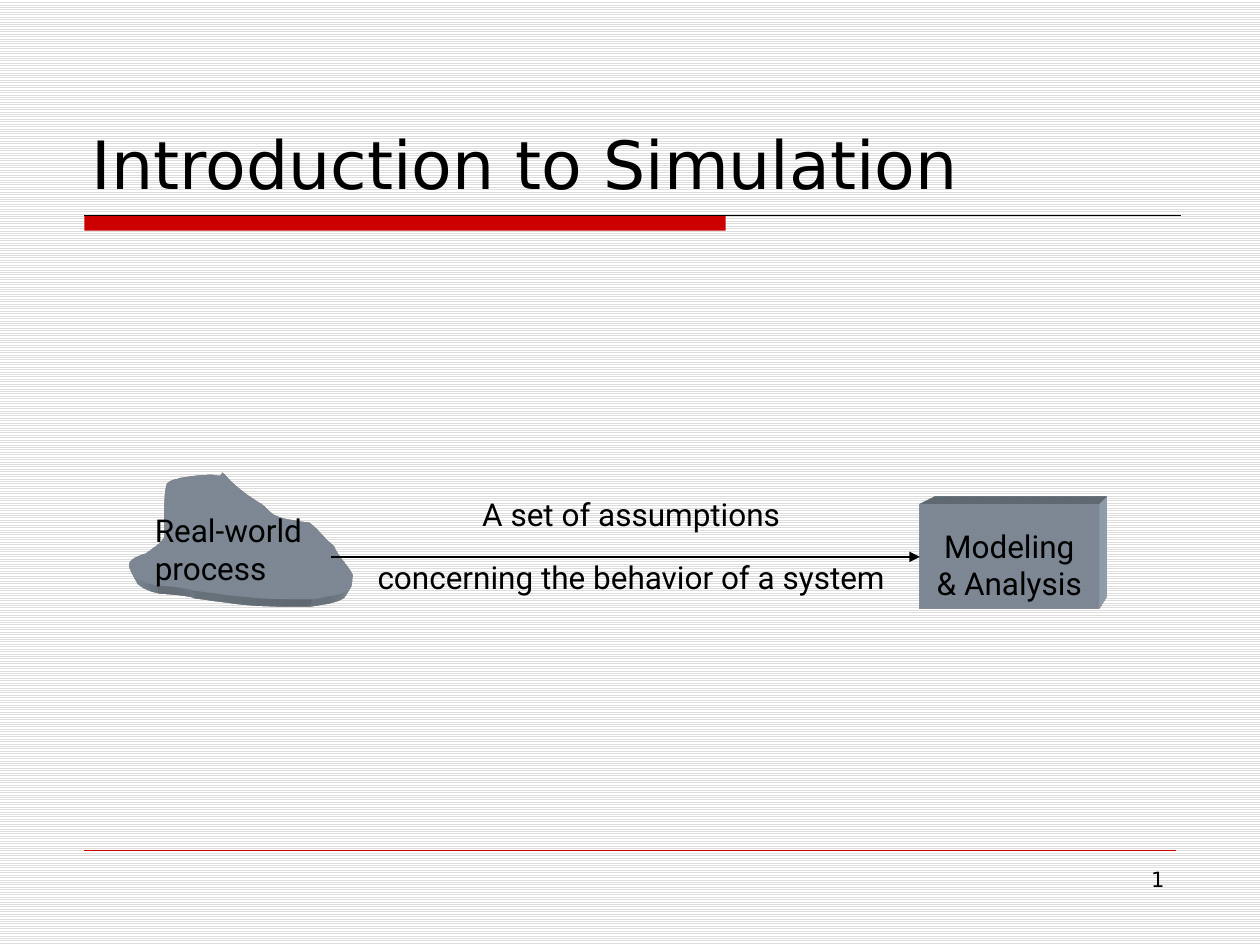
from dataclasses import dataclass

from lxml import etree
from pptx import Presentation
from pptx.dml.color import RGBColor
from pptx.enum.dml import MSO_PATTERN
from pptx.enum.shapes import MSO_CONNECTOR, MSO_SHAPE
from pptx.enum.text import MSO_ANCHOR, PP_ALIGN
from pptx.oxml.ns import qn
from pptx.util import Inches, Pt

LEFT, CENTER, RIGHT = PP_ALIGN.LEFT, PP_ALIGN.CENTER, PP_ALIGN.RIGHT
TOP, BOTTOM = MSO_ANCHOR.TOP, MSO_ANCHOR.BOTTOM
RECT = MSO_SHAPE.RECTANGLE
STRAIGHT = MSO_CONNECTOR.STRAIGHT
STRIPES = MSO_PATTERN.LIGHT_HORIZONTAL


@dataclass(frozen=True)
class Theme:
    ink: str = "000000"
    paper: str = "FFFFFF"
    stripe: str = "DDDDDD"
    red: str = "CC0000"
    steel: str = "A3B2C1"
    head: str = "DejaVu Sans"
    body: str = "Roboto"
    title: int = 38
    label: int = 18
    number: int = 12


THEME = Theme()

CLOUD_START = (1.77, 3.75)
CLOUD_CURVES = [
    ((1.85, 3.84), (1.93, 3.91), (2.06, 3.99)),
    ((2.12, 4.02), (2.13, 4.07), (2.21, 4.1)),
    ((2.29, 4.13), (2.37, 4.13), (2.46, 4.15)),
    ((2.54, 4.21), (2.57, 4.27), (2.65, 4.33)),
    ((2.68, 4.41), (2.76, 4.48), (2.8, 4.56)),
    ((2.79, 4.59), (2.8, 4.63), (2.78, 4.66)),
    ((2.74, 4.72), (2.57, 4.73), (2.48, 4.75)),
    ((2.33, 4.75), (2.18, 4.75), (2.04, 4.74)),
    ((1.88, 4.73), (1.7, 4.7), (1.54, 4.68)),
    ((1.44, 4.65), (1.34, 4.65), (1.24, 4.64)),
    ((1.15, 4.62), (1.11, 4.6), (1.06, 4.56)),
    ((1.02, 4.48), (1, 4.44), (1.16, 4.39)),
    ((1.22, 4.35), (1.28, 4.31), (1.31, 4.26)),
    ((1.31, 4.24), (1.3, 3.9), (1.33, 3.84)),
    ((1.36, 3.79), (1.61, 3.77), (1.68, 3.77)),
    ((1.77, 3.78), (1.74, 3.79), (1.77, 3.75)),
]


def rgb(color):
    return RGBColor.from_string(color)


def add_node(parent, tag, **values):
    node = etree.SubElement(parent, qn(tag))
    for name, value in values.items():
        node.set(name, value)
    return node


def paint(shape, color):
    shape.shadow.inherit = False
    shape.fill.solid()
    shape.fill.fore_color.rgb = rgb(color)
    shape.line.fill.background()


def extrude(shape, view):
    props = shape._element.spPr
    scene = add_node(props, "a:scene3d")
    add_node(scene, "a:camera", prst=f"legacyPerspective{view}")
    add_node(scene, "a:lightRig", rig="legacyFlat3", dir="b")
    solid = add_node(props, "a:sp3d", extrusionH="430200",
                     prstMaterial="legacyMatte")
    for edge in ("a:bevelT", "a:bevelB"):
        add_node(solid, edge, w="13500", h="13500", prst="angle")
    tint = add_node(solid, "a:extrusionClr")
    add_node(tint, "a:srgbClr", val=THEME.steel)


def add_block(slide, box, color):
    block = slide.shapes.add_shape(RECT, *map(Inches, box))
    paint(block, color)
    return block


def add_blob(slide, start, curves, color):
    pen = slide.shapes.build_freeform(*map(Inches, start))
    points = [tuple(map(Inches, point)) for curve in curves for point in curve]
    pen.add_line_segments(points, close=True)
    blob = pen.convert_to_shape()
    lines = list(blob._element.iter(qn("a:lnTo")))
    for one, two, end in zip(lines[::3], lines[1::3], lines[2::3]):
        one.tag = qn("a:cubicBezTo")
        for line in (two, end):
            one.append(line[0])
            line.getparent().remove(line)
    paint(blob, color)
    return blob


def add_line(slide, start, end, color, width, arrow=False):
    ends = map(Inches, (*start, *end))
    line = slide.shapes.add_connector(STRAIGHT, *ends)
    line.line.color.rgb = rgb(color)
    line.line.width = Pt(width)
    if arrow:
        add_node(line.line._get_or_add_ln(), "a:tailEnd", type="triangle")
    add_node(line._element.spPr, "a:effectLst")


def add_text(slide, box, text, size, font, align=CENTER, anchor=TOP):
    frame = slide.shapes.add_textbox(*map(Inches, box)).text_frame
    frame.word_wrap = True
    frame.vertical_anchor = anchor
    frame.text = text
    para = frame.paragraphs[0]
    para.alignment = align
    style = para.runs[0].font
    style.name = font
    style.size = Pt(size)
    style.color.rgb = rgb(THEME.ink)


def add_label(slide, box, text, align=CENTER):
    add_text(slide, box, text, THEME.label, THEME.body, align)


def add_frame(slide):
    fill = slide.background.fill
    fill.patterned()
    fill.pattern = STRIPES
    fill.fore_color.rgb = rgb(THEME.stripe)
    fill.back_color.rgb = rgb(THEME.paper)
    add_block(slide, (0.67, 1.71, 5.09, 0.12), THEME.red)
    add_line(slide, (0.67, 1.71), (9.37, 1.71), THEME.ink, 0.5)
    add_line(slide, (0.67, 6.75), (9.33, 6.75), THEME.red, 0.25)
    add_text(slide, (7.17, 6.83, 2.17, 0.52), "1",
             THEME.number, THEME.head, RIGHT)
    add_text(slide, (0.63, 0.33, 8.75, 1.33), "Introduction to Simulation",
             THEME.title, THEME.head, LEFT, BOTTOM)


def add_model(slide):
    blob = add_blob(slide, CLOUD_START, CLOUD_CURVES, THEME.steel)
    extrude(blob, "Bottom")
    block = add_block(slide, (7.3, 4, 1.42, 0.83), THEME.steel)
    extrude(block, "TopRight")
    add_label(slide, (1.13, 4.01, 1.42, 0.7), "Real-world process", LEFT)
    add_label(slide, (2.8, 4.38, 4.42, 0.4),
              "concerning the behavior of a system")
    add_label(slide, (2.8, 3.88, 4.42, 0.4), "A set of assumptions")
    add_label(slide, (7.3, 4.13, 1.42, 0.7), "Modeling & Analysis")
    add_line(slide, (2.63, 4.42), (7.3, 4.42), THEME.ink, 0.75, arrow=True)


def main():
    deck = Presentation()
    deck.slide_width, deck.slide_height = Inches(10), Inches(7.5)
    slide = deck.slides.add_slide(deck.slide_layouts[6])
    add_frame(slide)
    add_model(slide)
    deck.save("out.pptx")


if __name__ == "__main__":
    main()
